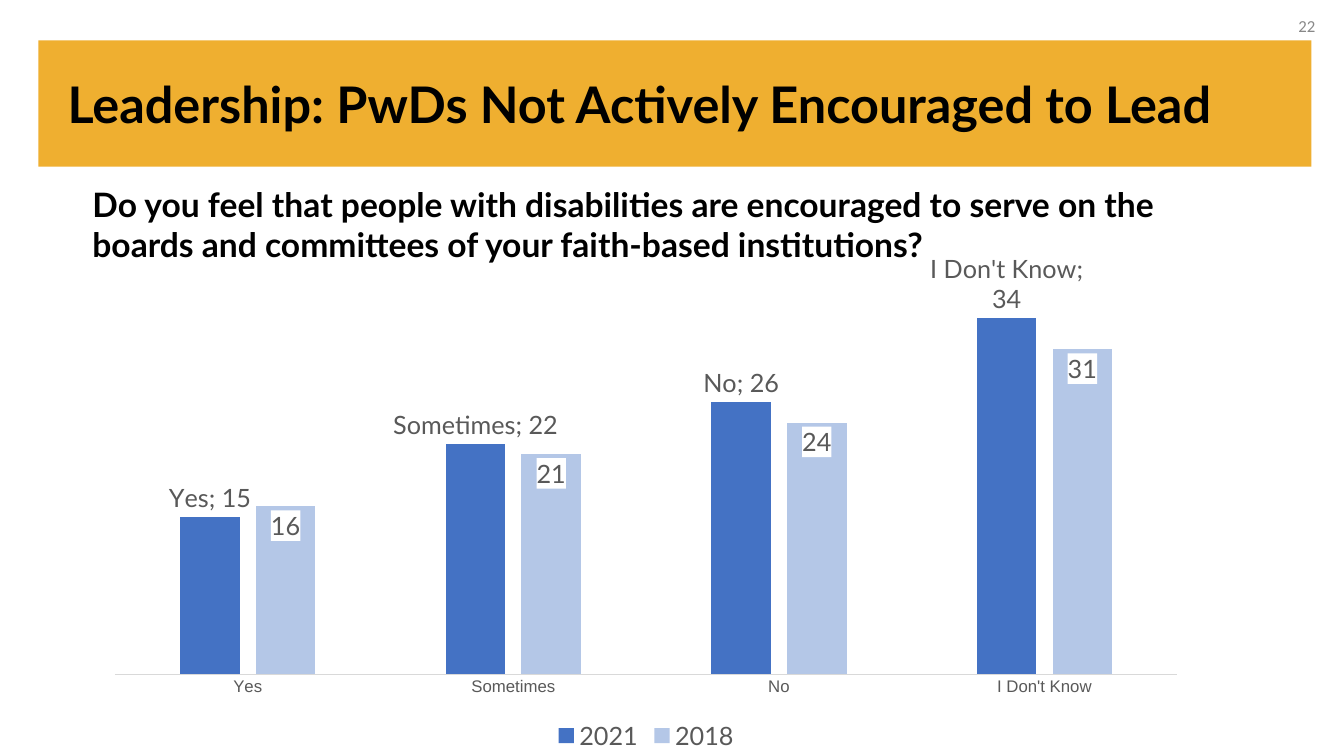
"""Build the slide on leadership encouragement for people with disabilities."""
from dataclasses import dataclass

from lxml.etree import fromstring
from pptx import Presentation
from pptx.chart.data import CategoryChartData
from pptx.dml.color import RGBColor
from pptx.enum.chart import XL_CHART_TYPE, XL_LABEL_POSITION, XL_LEGEND_POSITION, XL_TICK_MARK
from pptx.enum.shapes import MSO_SHAPE
from pptx.enum.text import MSO_ANCHOR, MSO_AUTO_SIZE, PP_ALIGN
from pptx.oxml.ns import nsdecls, qn
from pptx.util import Cm, Pt


@dataclass(frozen=True)
class Theme:
    band: RGBColor = RGBColor(0xEF, 0xAF, 0x30)
    ink: RGBColor = RGBColor(0, 0, 0)
    page: RGBColor = RGBColor(0x88, 0x88, 0x88)
    label: RGBColor = RGBColor(0x59, 0x59, 0x59)
    axis: RGBColor = RGBColor(0xD9, 0xD9, 0xD9)
    current: RGBColor = RGBColor(0x44, 0x72, 0xC4)
    earlier: RGBColor = RGBColor(0xB4, 0xC7, 0xE7)
    title_size: Pt = Pt(36)
    question_size: Pt = Pt(24)
    label_size: Pt = Pt(18)
    small_size: Pt = Pt(12)


theme = Theme()


def style(font, face, size, color, bold=False):
    font.name, font.size, font.bold = face, size, bold
    font.color.rgb = color


def write(frame, text, face, size, color, bold=False, align=PP_ALIGN.LEFT):
    frame.word_wrap = True
    paragraph = frame.paragraphs[0]
    paragraph.alignment = align
    run = paragraph.add_run()
    run.text = text
    style(run.font, face, size, color, bold)


deck = Presentation()
deck.slide_width, deck.slide_height = Cm(33.87), Cm(19.05)
slide = deck.slides.add_slide(deck.slide_layouts[5])

title = slide.shapes.title
title.left, title.top, title.width, title.height = Cm(1.45), Cm(1.02), Cm(30.89), Cm(3.18)
title.text_frame.vertical_anchor = MSO_ANCHOR.MIDDLE
title.text_frame.auto_size = MSO_AUTO_SIZE.NONE
write(title.text_frame, "Leadership: PwDs Not Actively Encouraged to Lead",
      "Lato", theme.title_size, theme.ink, True)

band = slide.shapes.add_shape(MSO_SHAPE.RECTANGLE, Cm(0.97), Cm(1.02), Cm(32.08), Cm(3.18))
band.shadow.inherit = False
band.fill.solid()
band.fill.fore_color.rgb = theme.band
band.line.fill.background()
title.element.addprevious(band.element)

page_number = slide.shapes.add_textbox(Cm(25.78), Cm(0.13), Cm(7.62), Cm(1.02))
page_number.text_frame.vertical_anchor = MSO_ANCHOR.MIDDLE
write(page_number.text_frame, "22", "Calibri", theme.small_size, theme.page, align=PP_ALIGN.RIGHT)

question = slide.shapes.add_textbox(Cm(2.08), Cm(4.5), Cm(27.53), Cm(2.31))
question.text_frame.auto_size = MSO_AUTO_SIZE.SHAPE_TO_FIT_TEXT
write(question.text_frame,
      "Do you feel that people with disabilities are encouraged to serve on the "
      "boards and committees of your faith-based institutions?",
      "Lato", theme.question_size, theme.ink, True)

answers = CategoryChartData()
answers.categories = ["Yes", "Sometimes", "No", "I Don't Know"]
answers.add_series("2021", [15, 22, 26, 34])
answers.add_series("2018", [16, 21, 24, 31])
chart = slide.shapes.add_chart(XL_CHART_TYPE.COLUMN_CLUSTERED, Cm(2.34), Cm(6.17),
                               Cm(27.89), Cm(12.88), answers).chart
style(chart.font, "Arial", Pt(10), theme.ink)
chart.has_title = False
chart.has_legend = True
chart.legend.position = XL_LEGEND_POSITION.BOTTOM
chart.legend.include_in_layout = False
style(chart.legend.font, "Lato", theme.label_size, theme.label)

answer_axis = chart.category_axis
answer_axis.major_tick_mark = XL_TICK_MARK.NONE
answer_axis.format.line.color.rgb = theme.axis
answer_axis.format.line.width = Pt(0.75)
style(answer_axis.tick_labels.font, "Arial", theme.small_size, theme.label)
share_axis = chart.value_axis
share_axis.minimum_scale, share_axis.maximum_scale = 0, 40
share_axis.has_major_gridlines = False
share_axis.visible = False

bars = chart.plots[0]
bars.gap_width, bars.overlap, bars.vary_by_categories = 219, -27, False
for survey, color, position in zip(
        bars.series, (theme.current, theme.earlier),
        (XL_LABEL_POSITION.OUTSIDE_END, XL_LABEL_POSITION.INSIDE_END)):
    survey.format.fill.solid()
    survey.format.fill.fore_color.rgb = color
    survey.invert_if_negative = False
    labels = survey.data_labels
    labels.show_value = True
    labels.show_category_name = position == XL_LABEL_POSITION.OUTSIDE_END
    labels.position = position
    style(labels.font, "Lato", theme.label_size, theme.label)

current_labels, earlier_labels = chart.element.findall(".//" + qn("c:dLbls"))
current_labels.find(qn("c:showBubbleSize")).addnext(
    fromstring(f'<c:separator {nsdecls("c")}>; </c:separator>'))
earlier_labels.find(qn("c:txPr")).addprevious(fromstring(
    f'<c:spPr {nsdecls("c", "a")}><a:solidFill><a:srgbClr val="FFFFFF"/></a:solidFill></c:spPr>'))

plot_area = chart.element.find(".//" + qn("c:plotArea"))
for automatic in plot_area.findall(qn("c:layout")):
    plot_area.remove(automatic)
plot_area.insert(0, fromstring(
    f'<c:layout {nsdecls("c")}><c:manualLayout><c:layoutTarget val="inner"/>'
    '<c:xMode val="edge"/><c:yMode val="edge"/><c:x val="0.02"/><c:y val="0.02"/>'
    '<c:w val="0.96"/><c:h val="0.82"/></c:manualLayout></c:layout>'))

deck.save("out.pptx")
